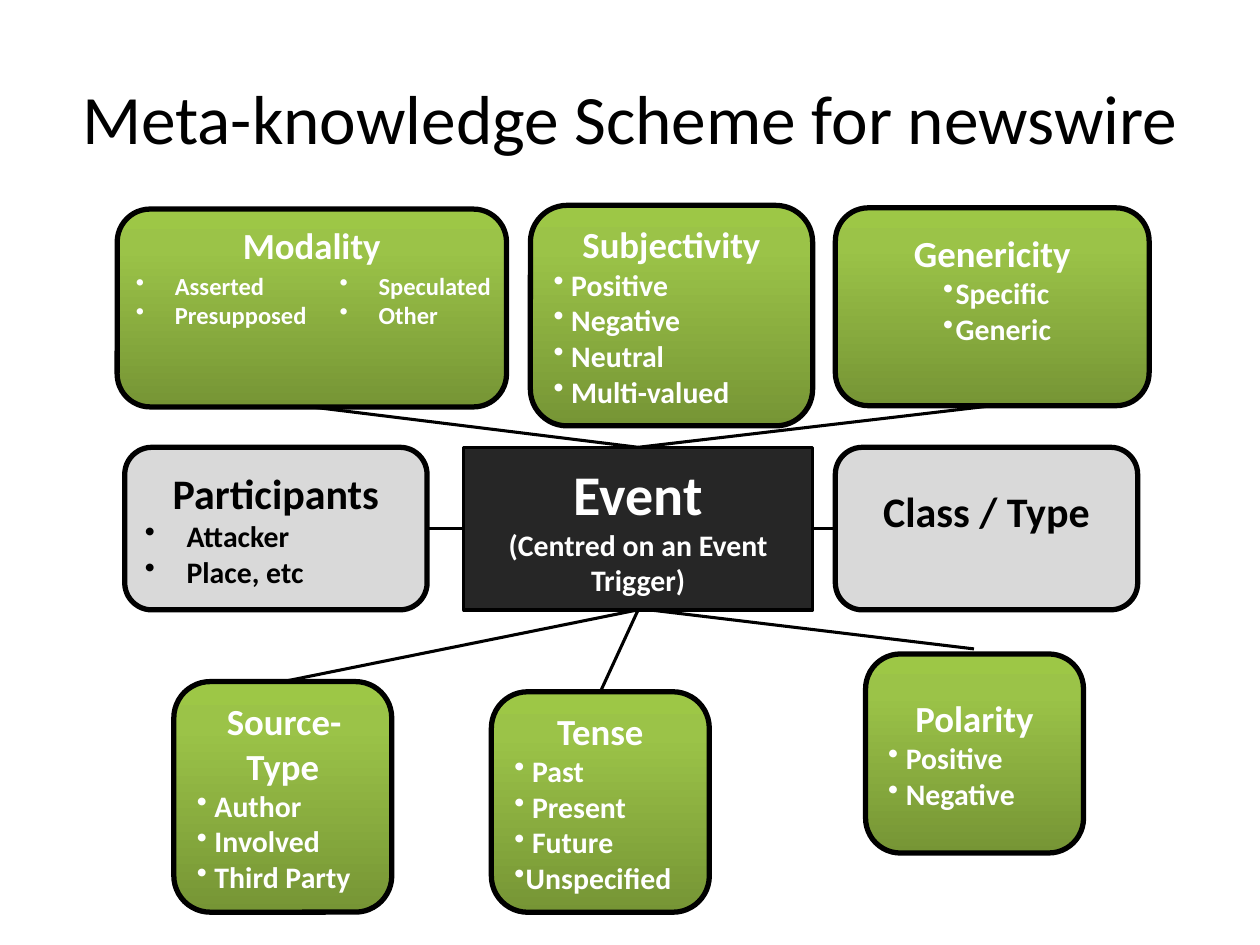
from copy import deepcopy
from pptx import Presentation
from pptx import util as u
from pptx.dml.color import RGBColor
from pptx.enum import shapes, text
from pptx.oxml.ns import qn

BLACK, WHITE, GREY, DARK = "000000", "FFFFFF", "D9D9D9", "262626"
GREEN = [(0, "769535"), (0.8, "9BC348"), (1, "9DC746")]
ROUND = shapes.MSO_SHAPE.ROUNDED_RECTANGLE
RECT = shapes.MSO_SHAPE.RECTANGLE
TOP, LEFT, BOTTOM, RIGHT = range(4)


def rgb(code):
    """Turn a hex string into a colour."""
    return RGBColor.from_string(code)


def place(spot):
    """Turn left, top, width and height in inches into lengths."""
    return [u.Inches(v) for v in spot]


def write(frame, words, size, color, bold=True, align=text.PP_ALIGN.CENTER, hang=None, left=0):
    """Add one paragraph, with a hanging bullet if hang is given."""
    para = frame.paragraphs[0]
    if para.runs:
        para = frame.add_paragraph()
    if hang is not None:
        props = para._p.get_or_add_pPr()
        props.set("marL", str(u.Inches(left + hang)))
        props.set("indent", str(-u.Inches(hang)))
        mark = props.makeelement(qn("a:buChar"), {"char": "•"})
        props.append(mark)
    para.add_run().text = words
    para.alignment = align
    para.font.size, para.font.bold = u.Pt(size), bold
    para.font.name, para.font.color.rgb = "Calibri", rgb(color)


def shade(shape, stops):
    """Fill a shape with a gradient that rises from the bottom."""
    shape.fill.gradient()
    shape.fill.gradient_angle = 90
    last = shape.element.xpath(".//a:gs")[-1]
    last.addnext(deepcopy(last))
    for stop, (pos, color) in zip(shape.fill.gradient_stops, stops):
        stop.position, stop.color.rgb = pos, rgb(color)


def box(slide, spot, fill, title, size, color=WHITE, kind=ROUND, line=3):
    """Draw an outlined box with a bold heading."""
    shape = slide.shapes.add_shape(kind, *place(spot))
    shape.shadow.inherit = False
    if fill == GREEN:
        shade(shape, fill)
    else:
        shape.fill.solid()
        shape.fill.fore_color.rgb = rgb(fill)
    shape.line.color.rgb, shape.line.width = rgb(BLACK), u.Pt(line)
    frame = shape.text_frame
    frame.word_wrap = True
    frame.vertical_anchor = text.MSO_ANCHOR.MIDDLE
    write(frame, title, size, color)
    return shape


def items(shape, names, color=WHITE, hang=0.14, left=0):
    """Add a bullet list under the heading of a box."""
    for name in names:
        write(shape.text_frame, name, 17, color, align=text.PP_ALIGN.JUSTIFY, hang=hang, left=left)


def group(slide, spot, title, names=(), **gaps):
    """Draw a green box with its list."""
    shape = box(slide, spot, GREEN, title, 21)
    items(shape, names, **gaps)
    return shape


def wire(slide, start, end):
    """Draw a black line between two points."""
    line = slide.shapes.add_connector(shapes.MSO_CONNECTOR.STRAIGHT, *place(start + end))
    line.line.color.rgb, line.line.width = rgb(BLACK), u.Pt(1.75)
    props = line.element.spPr
    props.append(props.makeelement(qn("a:effectLst"), {}))
    return line


def join(slide, first, side, second, other):
    """Join the middles of two box sides with a line."""
    line = wire(slide, (0, 0), (1, 1))
    line.begin_connect(first, side)
    line.end_connect(second, other)


def label(slide, spot):
    """Add an empty wrapping text box."""
    shape = slide.shapes.add_textbox(*place(spot))
    shape.text_frame.word_wrap = True
    return shape


def modes(slide):
    """Write the modality values in two columns."""
    shape = label(slide, (0.98, 2.1, 3.23, 1.55))
    frame = shape.text_frame
    frame.auto_size = text.MSO_AUTO_SIZE.NONE
    frame.margin_bottom = u.Inches(0.9)
    body = shape.element.xpath(".//a:bodyPr")[0]
    body.set("numCol", "2")
    body.set("spcCol", str(u.Inches(0.2)))
    for name in ("Asserted", "Presupposed", "Speculated", "Other"):
        write(frame, name, 14, WHITE, align=text.PP_ALIGN.LEFT, hang=0.31)


def main():
    """Build and save the slide."""
    deck = Presentation()
    deck.slide_width, deck.slide_height = u.Inches(10), u.Inches(7.5)
    slide = deck.slides.add_slide(deck.slide_layouts[6])

    head = label(slide, (0.5, 0.3, 9, 1.25)).text_frame
    head.vertical_anchor = text.MSO_ANCHOR.MIDDLE
    write(head, "Meta-knowledge Scheme for newswire", 39.6, BLACK, bold=False)

    sort = box(slide, (6.63, 3.55, 2.4, 1.29), GREY, "Class / Type", 24, BLACK)
    sort.text_frame.margin_bottom = u.Inches(0.34)
    event = box(slide, (3.68, 3.55, 2.77, 1.29), DARK, "Event", 32, kind=RECT, line=2)
    write(event.text_frame, "(Centred on an Event Trigger)", 17, WHITE)
    parts = box(slide, (0.99, 3.55, 2.4, 1.29), GREY, "Participants", 24, BLACK)
    items(parts, ["Attacker", "Place, etc"], BLACK, hang=0.33)

    mode = group(slide, (0.93, 1.66, 3.09, 1.57), "Modality")
    mode.text_frame.vertical_anchor = text.MSO_ANCHOR.TOP
    mode.text_frame.margin_top = u.Inches(0.03)
    modes(slide)
    genus = group(slide, (6.63, 1.65, 2.49, 1.57), "Genericity", ["Specific", "Generic"],
                  hang=0.1, left=0.68)
    genus.text_frame.margin_bottom = u.Inches(0.34)
    source = group(slide, (1.38, 5.41, 1.73, 1.83), "Source-Type",
                   ["Author", "Involved", "Third Party"])
    tense = group(slide, (3.9, 5.49, 1.73, 1.75), "Tense", ["Past", "Present", "Future"])
    items(tense, ["Unspecified"], hang=0.09)
    polar = group(slide, (6.87, 5.19, 1.73, 1.58), "Polarity", ["Positive", "Negative"])
    polar.adjustments[0] = 0.175

    links = [(TOP, mode, BOTTOM), (TOP, genus, BOTTOM), (BOTTOM, source, TOP),
             (BOTTOM, tense, TOP), (LEFT, parts, RIGHT), (RIGHT, sort, LEFT)]
    for side, other, end in links:
        join(slide, event, side, other, end)
    wire(slide, (7.73, 5.15), (5.15, 4.84))

    group(slide, (4.21, 1.63, 2.24, 1.75), "Subjectivity",
          ["Positive", "Negative", "Neutral", "Multi-valued"])
    deck.save("out.pptx")


if __name__ == "__main__":
    main()
